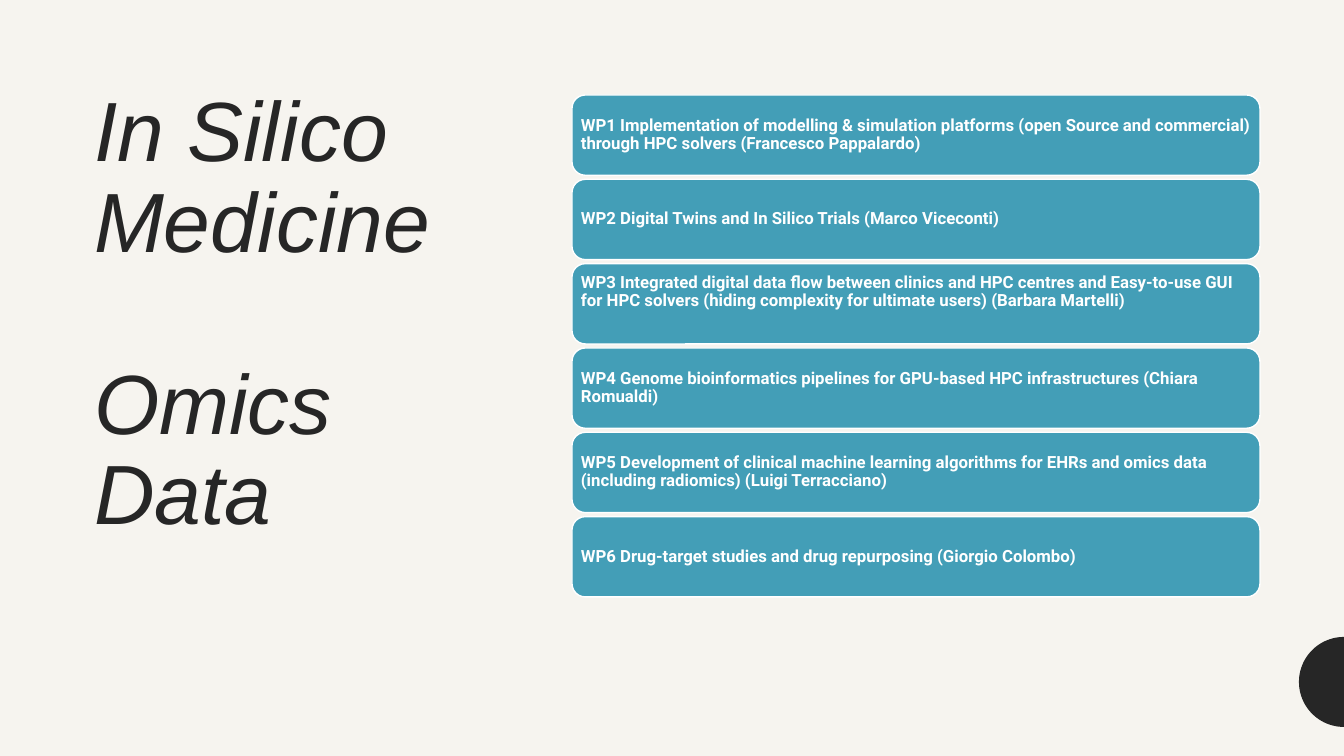
from math import cos, pi, sin

from pptx import Presentation
from pptx.dml.color import RGBColor
from pptx.enum.shapes import MSO_SHAPE
from pptx.enum.text import MSO_ANCHOR, MSO_AUTO_SIZE, PP_ALIGN
from pptx.util import Pt

TITLE = ["In Silico Medicine", "Omics Data"]
PACKS = [
    "WP1 Implementation of modelling & simulation platforms (open Source and commercial) "
    "through HPC solvers (Francesco Pappalardo)",
    "WP2 Digital Twins and In Silico Trials (Marco Viceconti)",
    "WP3 Integrated digital data flow between clinics and HPC centres and Easy-to-use GUI "
    "for HPC solvers (hiding complexity for ultimate users) (Barbara Martelli)",
    "WP4 Genome bioinformatics pipelines for GPU-based HPC infrastructures (Chiara Romualdi)",
    "WP5 Development of clinical machine learning algorithms for EHRs and omics data "
    "(including radiomics) (Luigi Terracciano)",
    "WP6 Drug-target studies and drug repurposing (Giorgio Colombo)",
]
RAISED = {2: 24}  # extra bottom inset that lifts the text of a box
COLORS = {"back": "F6F4EF", "dark": "262626", "teal": "439EB7", "white": "FFFFFF"}
HEAD = {"name": "Arial", "size": Pt(60), "italic": True, "bold": False}
BODY = {"name": "Roboto", "size": Pt(12), "bold": True}
SCALE = 914400 / 100.8
WIDE, HIGH = 1344, 756
LEFT, TOP, SPAN, BASE, GAP = 572, 95, 688, 597, 4


def px(n):
    return round(n * SCALE)


def color(name):
    return RGBColor.from_string(COLORS[name])


def paint(shape, fill, line=None):
    shape.shadow.inherit = False
    shape.fill.solid()
    shape.fill.fore_color.rgb = color(fill)
    if line:
        shape.line.color.rgb = color(line)
        shape.line.width = Pt(1)
    else:
        shape.line.fill.background()


def write(para, text, font, tint):
    para.text = text
    para.alignment = PP_ALIGN.LEFT
    para.line_spacing = 0.9
    para.space_before = Pt(0)
    for key, value in font.items():
        setattr(para.font, key, value)
    para.font.color.rgb = color(tint)


def inset(frame, side, top, low):
    frame.word_wrap = True
    frame.margin_left = frame.margin_right = px(side)
    frame.margin_top, frame.margin_bottom = px(top), px(low)


deck = Presentation()
deck.slide_width, deck.slide_height = px(WIDE), px(HIGH)
slide = deck.slides.add_slide(deck.slide_layouts[5])
slide.background.fill.solid()
slide.background.fill.fore_color.rgb = color("back")

# Half disc on the right edge
mid, rad, steps = 682, 45, 48
arc = [pi / 2 + pi * i / steps for i in range(steps + 1)]
dots = [(px(WIDE + rad * cos(a)), px(mid + rad * sin(a))) for a in arc]
path = slide.shapes.build_freeform(*dots[0])
path.add_line_segments(dots[1:], close=True)
paint(path.convert_to_shape(), "dark")

title = slide.shapes.title
title.left, title.top, title.width, title.height = map(px, (84, 84, 422, 524))
frame = title.text_frame
frame.auto_size = MSO_AUTO_SIZE.NONE
frame.vertical_anchor = MSO_ANCHOR.TOP
inset(frame, 10, 5, 5)
for i, text in enumerate(TITLE):
    para = frame.add_paragraph() if i else frame.paragraphs[0]
    write(para, text, HEAD, "dark")
    para.space_before = Pt(65 * i)

high = (BASE - TOP - GAP * (len(PACKS) - 1)) / len(PACKS)
for i, text in enumerate(PACKS):
    spot = map(px, (LEFT, TOP + i * (high + GAP), SPAN, high))
    box = slide.shapes.add_shape(MSO_SHAPE.ROUNDED_RECTANGLE, *spot)
    paint(box, "teal", "white")
    frame = box.text_frame
    frame.vertical_anchor = MSO_ANCHOR.MIDDLE
    inset(frame, 5, 5, 5 + RAISED.get(i, 0))
    write(frame.paragraphs[0], text, BODY, "white")

deck.save("out.pptx")
